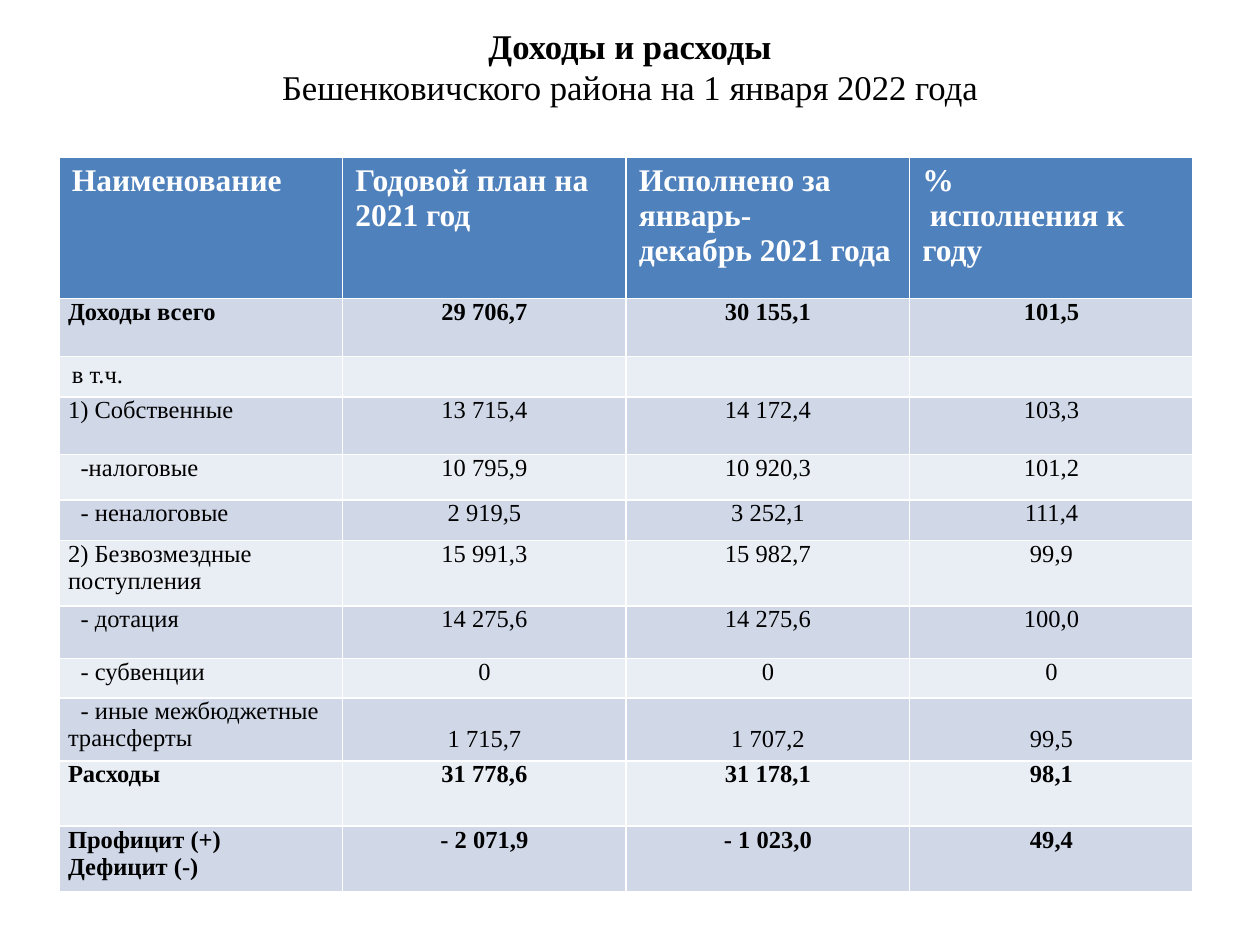
"""Build a slide with the district budget table: plan, actual and percentage."""
import pptx
import pptx.util
import pptx.dml.color
import pptx.enum.text

Inches, Pt = pptx.util.Inches, pptx.util.Pt
Align, Anchor = pptx.enum.text.PP_ALIGN, pptx.enum.text.MSO_ANCHOR

THEME = {
    "font": "Times New Roman",
    "title": 19.8, "header": 18, "body": 14,
    "ink": "000000", "paper": "FFFFFF",
    "head_fill": "4F81BD", "bands": ("D0D8E8", "E9EDF4"),
}
HEADERS = ["Наименование", "Годовой план на 2021 год",
           "Исполнено за январь-\nдекабрь 2021 года", "%\nисполнения к году"]
ROWS = [
    (0.46, "Доходы всего", "29 706,7", "30 155,1", "101,5"),
    (0.32, "в т.ч.", "", "", ""),
    (0.46, "1) Собственные", "13 715,4", "14 172,4", "103,3"),
    (0.36, "-налоговые", "10 795,9", "10 920,3", "101,2"),
    (0.32, "- неналоговые", "2 919,5", "3 252,1", "111,4"),
    (0.52, "2) Безвозмездные поступления", "15 991,3", "15 982,7", "99,9"),
    (0.42, "- дотация", "14 275,6", "14 275,6", "100,0"),
    (0.31, "- субвенции", "0", "0", "0"),
    (0.5, "- иные межбюджетные трансферты", "1 715,7", "1 707,2", "99,5"),
    (0.52, "Расходы", "31 778,6", "31 178,1", "98,1"),
    (0.52, "Профицит (+)\nДефицит (-)", "- 2 071,9", "- 1 023,0", "49,4"),
]
BOLD_ROWS = {"Доходы всего", "Расходы", "Профицит (+)\nДефицит (-)"}
HEADER_HEIGHT = 1.12


def style(para, size, color, bold, align=Align.LEFT):
    para.alignment = align
    para.font.name = THEME["font"]
    para.font.size = Pt(size)
    para.font.bold = bold
    para.font.color.rgb = pptx.dml.color.RGBColor.from_string(color)


def fill_cell(cell, text, fill, size, color, bold, align=Align.LEFT):
    cell.fill.solid()
    cell.fill.fore_color.rgb = pptx.dml.color.RGBColor.from_string(fill)
    cell.text_frame.text = text
    for para in cell.text_frame.paragraphs:
        style(para, size, color, bold, align)


deck = pptx.Presentation()
deck.slide_width, deck.slide_height = Inches(10), Inches(7.5)
page = deck.slides.add_slide(deck.slide_layouts[6])
width, height = deck.slide_width, deck.slide_height

title = page.shapes.add_textbox(int(width * 0.05), int(height * 0.02),
                                int(width * 0.9), int(height * 0.1))
title.text_frame.word_wrap = True
title.text_frame.vertical_anchor = Anchor.MIDDLE
title.text_frame.text = "Доходы и расходы\nБешенковичского района на 1 января 2022 года"
for para, bold in zip(title.text_frame.paragraphs, (True, False)):
    style(para, THEME["title"], THEME["ink"], bold, Align.CENTER)

heights = [HEADER_HEIGHT] + [row[0] for row in ROWS]
table = page.shapes.add_table(len(heights), len(HEADERS), Inches(0.47), Inches(1.25),
                              int(width * 0.9), Inches(sum(heights))).table
for row, row_height in zip(table.rows, heights):
    row.height = Inches(row_height)

for column, text in enumerate(HEADERS):
    fill_cell(table.cell(0, column), text, THEME["head_fill"],
              THEME["header"], THEME["paper"], True)
percent_para = table.cell(0, 3).text_frame.paragraphs[1]
percent_para._p.get_or_add_pPr().set("indent", str(Inches(0.06)))

for index, (row_height, *texts) in enumerate(ROWS):
    label = texts[0]
    for column, text in enumerate(texts):
        cell = table.cell(index + 1, column)
        fill_cell(cell, text, THEME["bands"][index % 2], THEME["body"], THEME["ink"],
                  label in BOLD_ROWS, Align.CENTER if column else Align.LEFT)
        if label == "в т.ч.":
            cell.margin_top = cell.margin_bottom = Inches(0.04)
            continue
        cell.margin_left = cell.margin_right = Inches(0.07)
        cell.margin_top = cell.margin_bottom = 0
        if column and "трансферты" in label:
            cell.vertical_anchor = Anchor.BOTTOM
            cell.margin_bottom = Inches(0.06)
    if label.startswith("-"):
        label_para = table.cell(index + 1, 0).text_frame.paragraphs[0]
        label_para._p.get_or_add_pPr().set("indent", str(Inches(0.1)))

deck.save("out.pptx")
